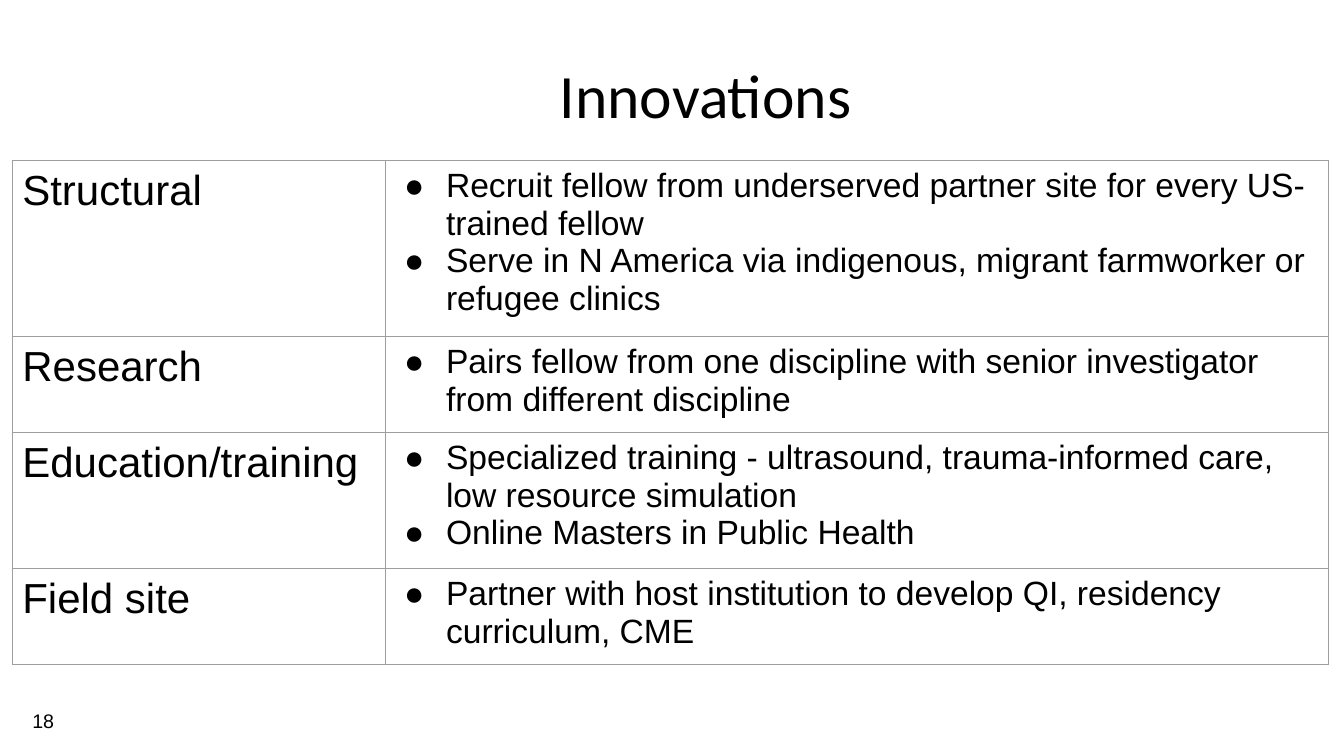
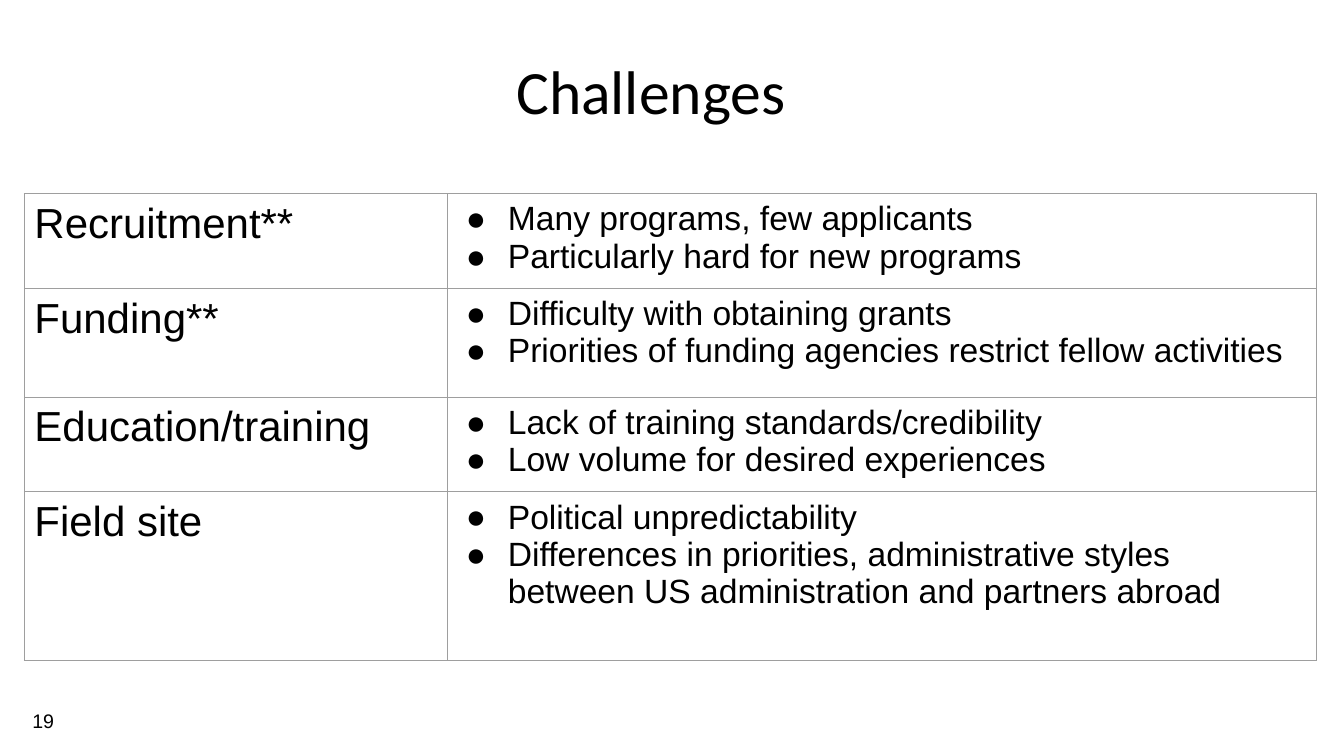
"""Build the two table slides on innovations and challenges."""
from lxml import etree
from pptx import Presentation
from pptx import util as u
from pptx.dml import color
from pptx.enum import text
from pptx.oxml import ns

HUES = {"ink": "000000", "rule": "9E9E9E"}


class Deck:
    def __init__(self):
        self.prs = Presentation()
        self.prs.slide_width, self.prs.slide_height = u.Pt(960), u.Pt(540)
        self.slide = None

    def page(self):
        self.slide = self.prs.slides.add_slide(self.prs.slide_layouts[6])

    def words(self, para, string, size, face="Arial"):
        run = para.add_run()
        run.text = string
        run.font.size = u.Pt(size)
        run.font.name = face
        run.font.color.rgb = color.RGBColor.from_string(HUES["ink"])

    def box(self, spot):
        frame = self.slide.shapes.add_textbox(*map(u.Pt, spot)).text_frame
        frame.word_wrap = True
        return frame

    def title(self, string, spot):
        frame = self.box(spot)
        frame.vertical_anchor = text.MSO_ANCHOR.MIDDLE
        para = frame.paragraphs[0]
        para.alignment = text.PP_ALIGN.CENTER
        self.words(para, string, 44, "Calibri")

    def number(self, num):
        self.words(self.box((16, 502.5, 56, 37)).paragraphs[0], str(num), 14)

    def bullet(self, para):
        props = para._p.get_or_add_pPr()
        props.set("marL", str(u.Pt(36)))
        props.set("indent", str(u.Pt(-30)))
        hue = etree.SubElement(props, ns.qn("a:buClr"))
        etree.SubElement(hue, ns.qn("a:srgbClr"), val=HUES["ink"])
        etree.SubElement(props, ns.qn("a:buFont"), typeface="Arial")
        etree.SubElement(props, ns.qn("a:buChar"), char="●")

    def style(self, cell):
        cell.margin_left = cell.margin_right = u.Pt(7.2)
        cell.margin_top = cell.margin_bottom = u.Pt(5)
        props = cell._tc.get_or_add_tcPr()
        for side in ("lnL", "lnR", "lnT", "lnB"):
            line = etree.SubElement(props, ns.qn("a:" + side), w=str(u.Pt(0.75)))
            fill = etree.SubElement(line, ns.qn("a:solidFill"))
            etree.SubElement(fill, ns.qn("a:srgbClr"), val=HUES["rule"])
        cell.fill.background()

    def table(self, left, top, cols, rows):
        high = sum(row[0] for row in rows)
        spot = map(u.Pt, (left, top, sum(cols), high))
        grid = self.slide.shapes.add_table(len(rows), len(cols), *spot).table
        grid.first_row = grid.horz_banding = False
        for col, wide in zip(grid.columns, cols):
            col.width = u.Pt(wide)
        for i, (tall, head, items) in enumerate(rows):
            grid.rows[i].height = u.Pt(tall)
            name, body = grid.cell(i, 0), grid.cell(i, 1)
            self.style(name)
            self.style(body)
            self.words(name.text_frame.paragraphs[0], head, 30)
            frame = body.text_frame
            for j, item in enumerate(items):
                para = frame.add_paragraph() if j else frame.paragraphs[0]
                self.bullet(para)
                self.words(para, item, 24)


PAGES = [
    {
        "num": 18,
        "title": ("Innovations", (168, 19, 672, 96)),
        "table": (8.8, 114.6, (266.6, 673.4), [
            (125.8, "Structural", [
                "Recruit fellow from underserved partner site for every US-trained fellow",
                "Serve in N America via indigenous, migrant farmworker or refugee clinics",
            ]),
            (68.4, "Research", [
                "Pairs fellow from one discipline with senior investigator from different discipline",
            ]),
            (97.2, "Education/training", [
                "Specialized training - ultrasound, trauma-informed care, low resource simulation",
                "Online Masters in Public Health",
            ]),
            (68.4, "Field site", [
                "Partner with host institution to develop QI, residency curriculum, CME",
            ]),
        ]),
    },
    {
        "num": 19,
        "title": ("Challenges", (178.5, 26.5, 573, 75.6)),
        "table": (17.4, 138.2, (302.2, 620.8), [
            (67.4, "Recruitment**", [
                "Many programs, few applicants",
                "Particularly hard for new programs",
            ]),
            (77.8, "Funding**", [
                "Difficulty with obtaining grants",
                "Priorities of funding agencies restrict fellow activities",
            ]),
            (67.6, "Education/training", [
                "Lack of training standards/credibility",
                "Low volume for desired experiences",
            ]),
            (120.8, "Field site", [
                "Political unpredictability",
                "Differences in priorities, administrative styles between US administration and partners abroad",
            ]),
        ]),
    },
]


def main():
    deck = Deck()
    for page in PAGES:
        deck.page()
        deck.title(*page["title"])
        deck.table(*page["table"])
        deck.number(page["num"])
    deck.prs.save("out.pptx")


if __name__ == "__main__":
    main()
